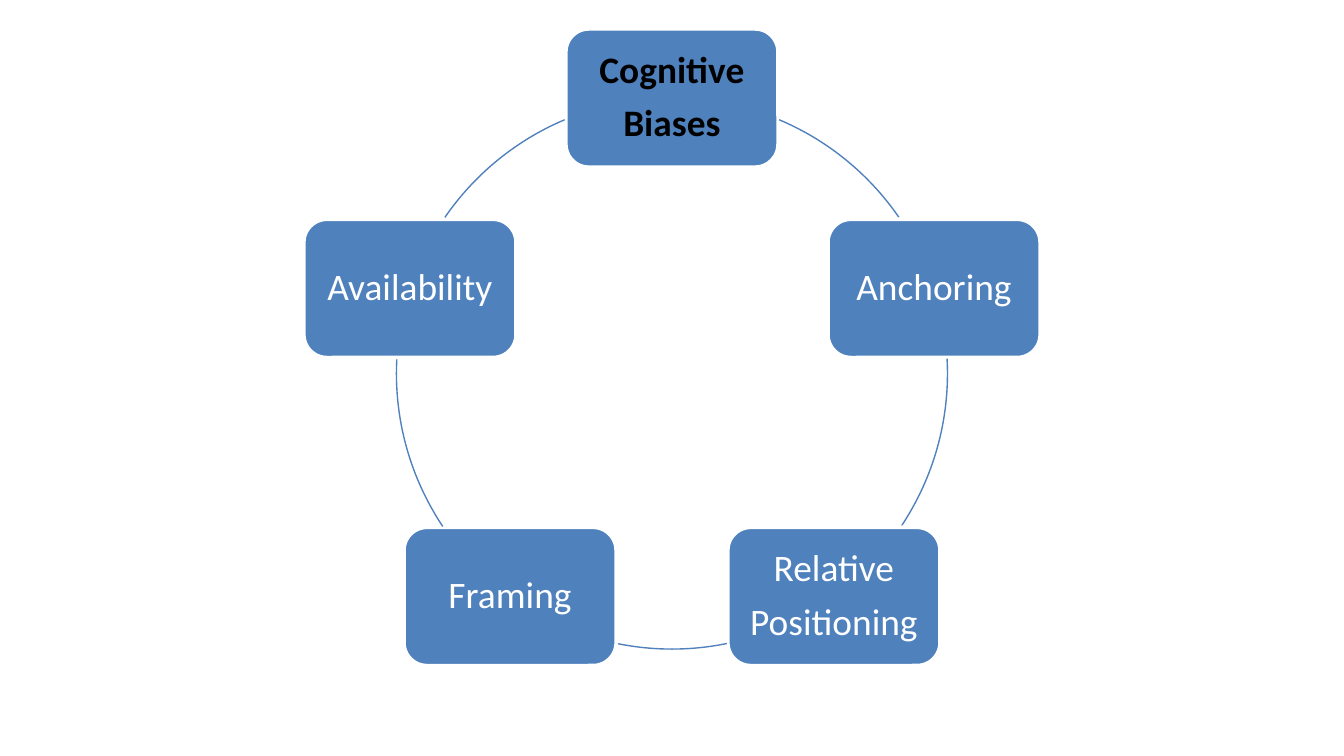
from math import cos, radians, sin

from pptx import Presentation
from pptx.dml.color import RGBColor
from pptx.enum.shapes import MSO_SHAPE
from pptx.enum.text import MSO_ANCHOR, PP_ALIGN
from pptx.util import Inches, Pt

ROUNDED = MSO_SHAPE.ROUNDED_RECTANGLE
ARC = MSO_SHAPE.ARC
MIDDLE = MSO_ANCHOR.MIDDLE
CENTER = PP_ALIGN.CENTER

BLUE, WHITE, BLACK = "4F81BD", "FFFFFF", "000000"
TITLE = "Cognitive\nBiases"
BIASES = ["Anchoring", "Relative\nPositioning", "Framing", "Availability"]
ARC_ANGLES = [(-67.1, -34.5), (-3.1, 33.7), (78.5, 101.5), (146.3, 183.1), (214.5, 247.1)]

SLIDE_W = 10
SLIDE_H = SLIDE_W * 9 / 16
CENTER_X, CENTER_Y = SLIDE_W / 2, 2.78
RADIUS = 2.05
BOX_W, BOX_H = 1.58, 1.03
PADDING = 0.08


def color(hex_code):
    return RGBColor.from_string(hex_code)


def add_centered(slide, preset, x, y, width, height, line_color, line_width):
    shape = slide.shapes.add_shape(
        preset, Inches(x - width / 2), Inches(y - height / 2), Inches(width), Inches(height))
    shape.shadow.inherit = False
    shape.line.color.rgb = color(line_color)
    shape.line.width = Pt(line_width)
    return shape


def add_box(slide, label, angle, text_color, bold):
    x = CENTER_X + RADIUS * cos(radians(angle))
    y = CENTER_Y + RADIUS * sin(radians(angle))
    box = add_centered(slide, ROUNDED, x, y, BOX_W, BOX_H, WHITE, 2)
    box.fill.solid()
    box.fill.fore_color.rgb = color(BLUE)
    frame = box.text_frame
    frame.text = label
    frame.word_wrap = True
    frame.vertical_anchor = MIDDLE
    frame.margin_left = frame.margin_right = Inches(PADDING)
    frame.margin_top = frame.margin_bottom = Inches(PADDING)
    for paragraph in frame.paragraphs:
        paragraph.alignment = CENTER
        paragraph.line_spacing = 0.9
        paragraph.space_after = Pt(7)
        for run in paragraph.runs:
            run.font.name = "Calibri"
            run.font.size = Pt(20)
            run.font.bold = bold
            run.font.color.rgb = color(text_color)


def add_arc(slide, start, end):
    arc = add_centered(slide, ARC, CENTER_X, CENTER_Y, 2 * RADIUS, 2 * RADIUS, BLUE, 0.75)
    arc.fill.background()
    for index, angle in enumerate((start, end)):
        arc.adjustments[index] = angle % 360 * 0.6


def main():
    deck = Presentation()
    deck.slide_width, deck.slide_height = Inches(SLIDE_W), Inches(SLIDE_H)
    slide = deck.slides.add_slide(deck.slide_layouts[6])
    labels = [TITLE] + BIASES
    step = 360 / len(labels)
    for index, (label, (start, end)) in enumerate(zip(labels, ARC_ANGLES)):
        is_title = label == TITLE
        add_box(slide, label, index * step - 90, BLACK if is_title else WHITE, is_title)
        add_arc(slide, start, end)
    deck.save("out.pptx")


if __name__ == "__main__":
    main()
